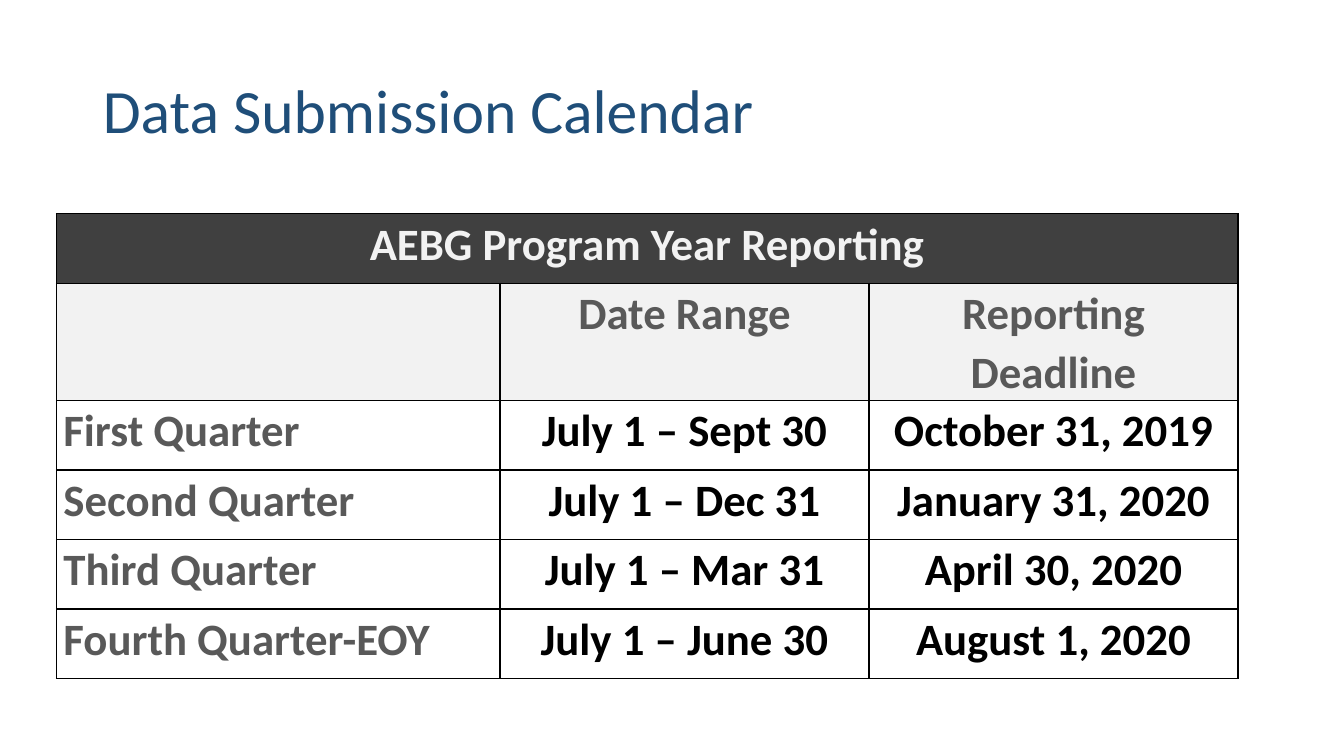
import pptx
import pptx.util
import pptx.dml.color
import pptx.enum.text
import pptx.oxml
import pptx.oxml.ns
from pptx.util import Inches

TITLE = "Data Submission Calendar"
BANNER = "AEBG Program Year Reporting"
HEADS = ["", "Date Range", "Reporting Deadline"]
TERMS = [
    ("First Quarter", "July 1 – Sept 30", "October 31, 2019"),
    ("Second Quarter", "July 1 – Dec 31", "January 31, 2020"),
    ("Third Quarter", "July 1 – Mar 31", "April 30, 2020"),
    ("Fourth Quarter-EOY", "July 1 – June 30", "August 1, 2020"),
]
COLORS = {"title": "1F4E79", "dark": "404040", "pale": "F2F2F2",
          "gray": "595959", "black": "000000"}
WIDTHS = [4.4, 3.66, 3.66]
ROW = 0.69
ALIGN = pptx.enum.text.PP_ALIGN


def rgb(name):
    return pptx.dml.color.RGBColor.from_string(COLORS[name])


def write(frame, text, size=32, color="black", bold=True,
          align=ALIGN.CENTER, space=1.07):
    para = frame.paragraphs[0]
    para.alignment = align
    para.line_spacing = space
    run = para.add_run()
    run.text = text
    font = run.font
    font.name = "Calibri"
    font.size = pptx.util.Pt(size)
    font.bold = bold
    font.color.rgb = rgb(color)


def border(cell):
    props = cell._tc.get_or_add_tcPr()
    for at, side in enumerate(("lnL", "lnR", "lnT", "lnB")):
        line = pptx.oxml.parse_xml(
            f'<a:{side} {pptx.oxml.ns.nsdecls("a")} w="12700"><a:solidFill>'
            f'<a:srgbClr val="{COLORS["black"]}"/></a:solidFill></a:{side}>')
        props.insert(at, line)


def style(cell, fill=None):
    cell.margin_left = cell.margin_right = Inches(0.07)
    cell.margin_top = cell.margin_bottom = 0
    if fill:
        cell.fill.solid()
        cell.fill.fore_color.rgb = rgb(fill)
    else:
        cell.fill.background()
    border(cell)


def main():
    deck = pptx.Presentation()
    deck.slide_width, deck.slide_height = Inches(13.33), Inches(7.5)
    slide = deck.slides.add_slide(deck.slide_layouts[5])

    # Title
    title = slide.shapes.title
    title.left, title.top = Inches(0.92), Inches(0.4)
    title.width, title.height = Inches(11.5), Inches(1.45)
    title.text_frame.vertical_anchor = pptx.enum.text.MSO_ANCHOR.MIDDLE
    write(title.text_frame, TITLE, size=44, color="title", bold=False,
          align=ALIGN.LEFT, space=0.9)

    # Table frame
    rows = [(BANNER, "", ""), HEADS, *TERMS]
    grid = slide.shapes.add_table(
        len(rows), len(WIDTHS), Inches(0.56), Inches(2.12),
        Inches(sum(WIDTHS)), Inches(ROW * len(rows))).table
    grid.first_row = grid.horz_banding = False
    for col, width in zip(grid.columns, WIDTHS):
        col.width = Inches(width)
    grid.cell(0, 0).merge(grid.cell(0, len(WIDTHS) - 1))

    # Cells
    fills = {0: "dark", 1: "pale"}
    for r, row in enumerate(rows):
        for c, text in enumerate(row):
            cell = grid.cell(r, c)
            style(cell, fills.get(r))
            if not text:
                continue
            if r == 0:
                color = "pale"
            else:
                color = "gray" if r == 1 or c == 0 else "black"
            left = r > 1 and c == 0
            write(cell.text_frame, text, color=color,
                  align=ALIGN.LEFT if left else ALIGN.CENTER)

    deck.save("out.pptx")


if __name__ == "__main__":
    main()
